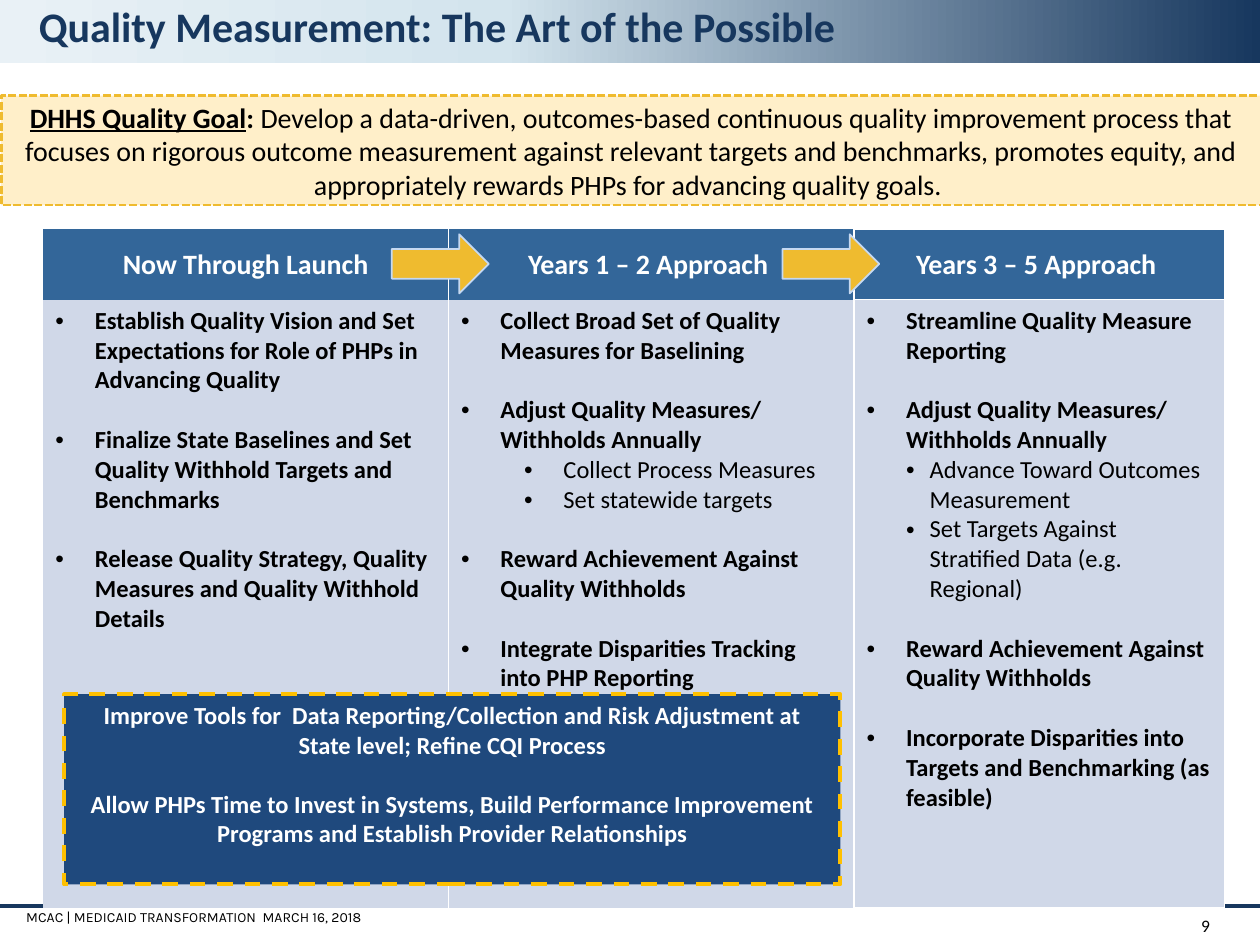
from copy import deepcopy
from dataclasses import dataclass

from lxml.etree import SubElement
from pptx import Presentation
from pptx.dml.color import RGBColor
from pptx.enum.dml import MSO_LINE
from pptx.enum.shapes import MSO_CONNECTOR, MSO_SHAPE
from pptx.enum.text import MSO_ANCHOR, PP_ALIGN
from pptx.oxml import parse_xml
from pptx.oxml.ns import nsdecls, qn
from pptx.util import Pt


@dataclass(frozen=True)
class Theme:
    navy: str = "17375E"
    mist: str = "D3E4ED"
    pale: str = "E9F1F6"
    cream: str = "FFEFC9"
    gold: str = "EFBB2F"
    amber: str = "FFC000"
    steel: str = "336699"
    ice: str = "D0D8E8"
    sky: str = "C6D9F1"
    deep: str = "1F497D"
    black: str = "000000"
    white: str = "FFFFFF"
    font: str = "Calibri"
    foot: str = "Karla"
    title: int = 24
    head: int = 16
    body: int = 14
    page: int = 10
    small: int = 8
    gap: int = 17


T = Theme()
PLAIN = "{2D5ABB26-0587-4C30-8999-92F81FD0307C}"  # table style without grid

# Each stage: heading, sub-bullet (margin, hang), points as (level, text)
STAGES = [
    ("Now Through Launch", (0, 0), [
        (0, "Establish Quality Vision and Set Expectations for Role of PHPs in Advancing Quality"),
        (0, "Finalize State Baselines and Set Quality Withhold Targets and Benchmarks"),
        (0, "Release Quality Strategy, Quality Measures and Quality Withhold Details")]),
    ("Years 1 – 2 Approach ", (58.5, 22.5), [
        (0, "Collect Broad Set of Quality Measures for Baselining"),
        (0, "Adjust Quality Measures/ Withholds Annually"),
        (1, "Collect Process Measures"),
        (1, "Set statewide targets"),
        (0, "Reward Achievement Against Quality Withholds"),
        (0, "Integrate Disparities Tracking into PHP Reporting")]),
    ("Years 3 – 5 Approach ", (36, 13.5), [
        (0, "Streamline Quality Measure Reporting"),
        (0, "Adjust Quality Measures/ Withholds Annually"),
        (1, "Advance Toward Outcomes Measurement"),
        (1, "Set Targets Against Stratified Data (e.g. Regional)"),
        (0, "Reward Achievement Against Quality Withholds"),
        (0, "Incorporate Disparities into Targets and Benchmarking (as feasible)")]),
]


def color(code):
    return RGBColor.from_string(code)


def style(para, size, tint=T.black, bold=False, font=T.font, align=PP_ALIGN.LEFT):
    para.alignment = align
    for run in para.runs:
        run.font.size, run.font.name, run.font.bold = Pt(size), font, bold
        run.font.color.rgb = color(tint)


def shape(slide, box, fill, line=None, width=1, dash=None, kind=MSO_SHAPE.RECTANGLE):
    item = slide.shapes.add_shape(kind, *map(Pt, box))
    item.shadow.inherit = False
    if fill:
        item.fill.solid()
        item.fill.fore_color.rgb = color(fill)
    if line:
        item.line.color.rgb = color(line)
        item.line.width = Pt(width)
        item.line.dash_style = dash
    else:
        item.line.fill.background()
    return item


def label(slide, box, text, size, anchor=MSO_ANCHOR.MIDDLE, **look):
    frame = slide.shapes.add_textbox(*map(Pt, box)).text_frame
    frame.word_wrap = True
    frame.vertical_anchor = anchor
    frame.text = text
    style(frame.paragraphs[0], size, **look)
    return frame.paragraphs[0]


def banner(slide, box):
    x, y, w, h = box
    fill = shape(slide, box, None).fill
    fill.gradient()
    fill.gradient_angle = 180
    stops = fill.gradient_stops
    last = stops[1]._gs
    last.addnext(deepcopy(last))
    for stop, (place, tint) in zip(fill.gradient_stops, [(0, T.navy), (0.6, T.mist), (1, T.pale)]):
        stop.position = place
        stop.color.rgb = color(tint)
    para = label(slide, (x + 15.1, y, w - 57.6, h - 0.7), "Quality Measurement: The Art of the Possible",
                 T.title, MSO_ANCHOR.TOP, tint=T.navy, bold=True)
    para.line_spacing = 0.9


def goal(slide, box):
    frame = shape(slide, box, T.cream, T.gold, 1.5, MSO_LINE.SQUARE_DOT).text_frame
    frame.word_wrap = True
    frame.vertical_anchor = MSO_ANCHOR.MIDDLE
    frame.margin_left = frame.margin_right = Pt(8)
    frame.margin_top = frame.margin_bottom = Pt(4)
    para = frame.paragraphs[0]
    for text in ("DHHS Quality Goal", ": ",
                 "Develop a data-driven, outcomes-based continuous quality improvement process that "
                 "focuses on rigorous outcome measurement against relevant targets and benchmarks, "
                 "promotes equity, and appropriately rewards PHPs for advancing quality goals. "):
        para.add_run().text = text
    style(para, T.head, align=PP_ALIGN.CENTER)
    name, colon, _ = para.runs
    name.font.bold = colon.font.bold = name.font.underline = True


def border(cell, sides):
    props = cell._tc.get_or_add_tcPr()
    for spot, side in enumerate(sides):
        props.insert(spot, parse_xml(
            f'<a:ln{side} {nsdecls("a")} w="12700"><a:solidFill>'
            f'<a:srgbClr val="{T.white}"/></a:solidFill></a:ln{side}>'))


def bullet(para, margin, hang):
    props = para._p.get_or_add_pPr()
    props.set("marL", str(Pt(margin)))
    props.set("indent", str(-Pt(hang)))
    SubElement(props, qn("a:buFont"), typeface="Arial")
    SubElement(props, qn("a:buChar"), char="•")


def points(frame, items, sub):
    frame.text = "\n".join(text for _, text in items)
    for spot, (para, (level, _)) in enumerate(zip(frame.paragraphs, items)):
        style(para, T.body, bold=level == 0)
        para.level = level
        if spot and level == 0:
            para.space_before = Pt(T.gap)
        bullet(para, *(sub if level else (22.5, 22.5)))


def stages(slide, box, wides, highs):
    grid = slide.shapes.add_table(2, len(STAGES), *map(Pt, box)).table
    grid._tbl.tblPr.find(qn("a:tableStyleId")).text = PLAIN
    for row, high in zip(grid.rows, highs):
        row.height = Pt(high)
    for col, ((name, sub, items), wide, sides) in enumerate(zip(STAGES, wides, ("R", "LR", "LRTB"))):
        grid.columns[col].width = Pt(wide)
        head, body = grid.cell(0, col), grid.cell(1, col)
        for cell, tint in ((head, T.steel), (body, T.ice)):
            cell.fill.solid()
            cell.fill.fore_color.rgb = color(tint)
            border(cell, sides)
        head.vertical_anchor = MSO_ANCHOR.MIDDLE
        head.text_frame.text = name
        style(head.text_frame.paragraphs[0], T.head, T.white, True, align=PP_ALIGN.CENTER)
        points(body.text_frame, items, sub)


def tools(slide, box):
    frame = shape(slide, box, T.deep, T.amber, 2.25, MSO_LINE.DASH).text_frame
    frame.word_wrap = True
    frame.vertical_anchor = MSO_ANCHOR.TOP
    frame.text = ("Improve Tools for  Data Reporting/Collection and Risk Adjustment at State level; "
                  "Refine CQI Process\nAllow PHPs Time to Invest in Systems, Build Performance "
                  "Improvement Programs and Establish Provider Relationships")
    for para in frame.paragraphs:
        style(para, T.body, T.white, True, align=PP_ALIGN.CENTER)
    frame.paragraphs[1].space_before = Pt(T.gap)


def footer(slide, box):
    x, y, w, h = box
    rule = slide.shapes.add_connector(MSO_CONNECTOR.STRAIGHT, Pt(x), Pt(y), Pt(x + w), Pt(y))
    rule.line.color.rgb = color(T.navy)
    rule.line.width = Pt(2.25)
    SubElement(rule._element.spPr, qn("a:effectLst"))
    label(slide, (x + 653.8, y, 44.6, h), "9", T.page, align=PP_ALIGN.RIGHT)
    label(slide, (x + 7.9, y - 2, 604.8, 17), "MCAC | MEDICAID TRANSFORMATION  MARCH 16, 2018",
          T.small, font=T.foot)


def main():
    deck = Presentation()
    deck.slide_width, deck.slide_height = Pt(720), Pt(540)
    slide = deck.slides.add_slide(deck.slide_layouts[6])
    banner(slide, (0, 0, 720, 36))
    footer(slide, (0, 517.7, 720, 22.3))
    goal(slide, (0.7, 54.7, 720, 62.6))
    stages(slide, (24.5, 131, 675.4, 388), (231.8, 231.8, 211.8), (40.3, 347.7))
    # Arrows between the stage headings
    for left in (223.9, 447.1):
        shape(slide, (left, 133.9, 55.4, 33.8), T.gold, T.sky, kind=MSO_SHAPE.RIGHT_ARROW)
    tools(slide, (36.7, 396.7, 443.5, 108.7))
    deck.save("out.pptx")


if __name__ == "__main__":
    main()
